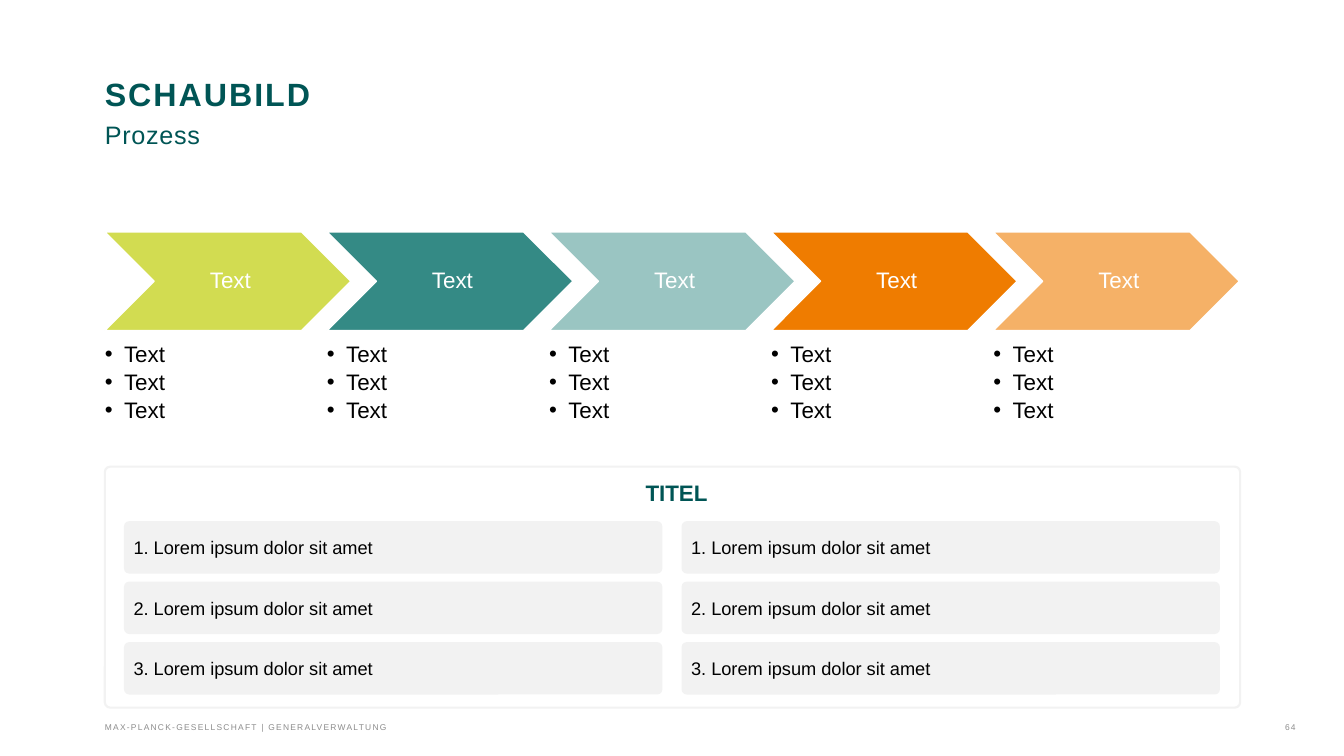
from lxml import etree
from pptx import Presentation
from pptx.dml.color import RGBColor
from pptx.enum import shapes, text
from pptx.oxml.ns import qn
from pptx.util import Inches, Pt

COLORS = {
    "title": "005555", "footer": "8C8C8C", "white": "FFFFFF",
    "black": "000000", "panel": "F2F2F2", "lime": "D2DC51",
    "teal": "348A85", "mist": "9AC5C2", "orange": "EF7C00",
    "apricot": "F5B167",
}
SHAPE = shapes.MSO_SHAPE
ALIGN = text.PP_ALIGN
ANCHOR = text.MSO_ANCHOR


def rgb(name):
    return RGBColor.from_string(COLORS[name])


def add_run(p, words, size=16, color="black", bold=False, spacing=0):
    r = p.add_run()
    r.text = words
    r.font.name = "Arial"
    r.font.size = Pt(size)
    r.font.bold = bold
    r.font.color.rgb = rgb(color)
    if spacing:
        r._r.get_or_add_rPr().set("spc", str(round(spacing * 100)))
    return r


class Slide:
    """Holds the font style and the slide being filled."""

    def __init__(self, prs):
        self.s = prs.slides.add_slide(prs.slide_layouts[6])

    def frame(self, sp, insets=(0, 0, 0, 0), anchor=ANCHOR.TOP):
        tf = sp.text_frame
        tf.word_wrap = True
        tf.vertical_anchor = anchor
        (tf.margin_left, tf.margin_top,
         tf.margin_right, tf.margin_bottom) = map(Inches, insets)
        return tf

    def textbox(self, x, y, w, h, **fmt):
        sp = self.s.shapes.add_textbox(*map(Inches, (x, y, w, h)))
        return self.frame(sp, **fmt)

    def shape(self, kind, x, y, w, h, adj, fill=None, line=None, width=1):
        sp = self.s.shapes.add_shape(kind, *map(Inches, (x, y, w, h)))
        sp.shadow.inherit = False
        sp.adjustments[0] = adj
        if fill:
            sp.fill.solid()
            sp.fill.fore_color.rgb = rgb(fill)
        else:
            sp.fill.background()
        if line:
            sp.line.color.rgb = rgb(line)
            sp.line.width = Pt(width)
        else:
            sp.line.fill.background()
        return sp

    def chevron(self, x, y, words, fill):
        sp = self.shape(SHAPE.CHEVRON, x, y, 2.44, 0.98, 0.5, fill, "white")
        tf = self.frame(sp, (0.07, 0.02, 0.02, 0.02), ANCHOR.MIDDLE)
        p = tf.paragraphs[0]
        p.alignment = ALIGN.CENTER
        p.line_spacing = 0.9
        add_run(p, words, color="white")

    def bullets(self, x, y, items):
        tf = self.textbox(x, y, 1.95, 1.28)
        for i, item in enumerate(items):
            p = tf.add_paragraph() if i else tf.paragraphs[0]
            pPr = p._p.get_or_add_pPr()
            pPr.set("marL", str(Inches(0.19)))
            pPr.set("indent", str(-Inches(0.19)))
            etree.SubElement(pPr, qn("a:buFont")).set("typeface", "Arial")
            etree.SubElement(pPr, qn("a:buChar")).set("char", "•")
            p.line_spacing = 0.9
            p.space_after = Pt(3)
            add_run(p, item)

    def entry(self, x, y, words):
        sp = self.shape(SHAPE.ROUNDED_RECTANGLE, x, y, 5.34, 0.52, 0.1, "panel")
        tf = self.frame(sp, (0.08,) * 4, ANCHOR.MIDDLE)
        p = tf.paragraphs[0]
        p.alignment = ALIGN.LEFT
        add_run(p, words, 13)


def main():
    prs = Presentation()
    prs.slide_width, prs.slide_height = Inches(13.33), Inches(7.5)
    slide = Slide(prs)

    # Heading
    p = slide.textbox(1.04, 0.76, 11.26, 1.54).paragraphs[0]
    p.line_spacing = Pt(26)
    add_run(p, "SCHAUBILD", 23, "title", True, 1.4)
    p.add_line_break()
    add_run(p, "Prozess", 18, "title", spacing=0.5)

    # Footer with page number at a right tab
    tf = slide.textbox(1.04, 7.06, 11.85, 0.2, anchor=ANCHOR.BOTTOM)
    p = tf.paragraphs[0]
    tabs = etree.SubElement(p._p.get_or_add_pPr(), qn("a:tabLst"))
    tab = etree.SubElement(tabs, qn("a:tab"))
    tab.set("pos", str(Inches(11.81)))
    tab.set("algn", "r")
    add_run(p, "MAX-PLANCK-GESELLSCHAFT | GENERALVERWALTUNG\t64",
            6, "footer", spacing=0.9)

    # Process steps
    for i, fill in enumerate(("lime", "teal", "mist", "orange", "apricot")):
        x = 1.04 + 2.203 * i
        slide.chevron(x, 2.3, "Text", fill)
        slide.bullets(x, 3.4, ["Text"] * 3)

    # Panel and its title
    slide.shape(SHAPE.ROUNDED_RECTANGLE, 1.04, 4.63, 11.26, 2.39, 0.022,
                line="panel", width=1.5)
    tf = slide.textbox(1.08, 4.63, 11.22, 0.52, anchor=ANCHOR.MIDDLE,
                       insets=(0.12, 0.04, 0.08, 0.04))
    p = tf.paragraphs[0]
    p.alignment = ALIGN.CENTER
    add_run(p, "TITEL", color="title", bold=True)

    # Numbered entries in two columns
    for x in (1.23, 6.76):
        for i in range(3):
            slide.entry(x, 5.17 + 0.6 * i,
                        f"{i + 1}. Lorem ipsum dolor sit amet")

    prs.save("out.pptx")


if __name__ == "__main__":
    main()
